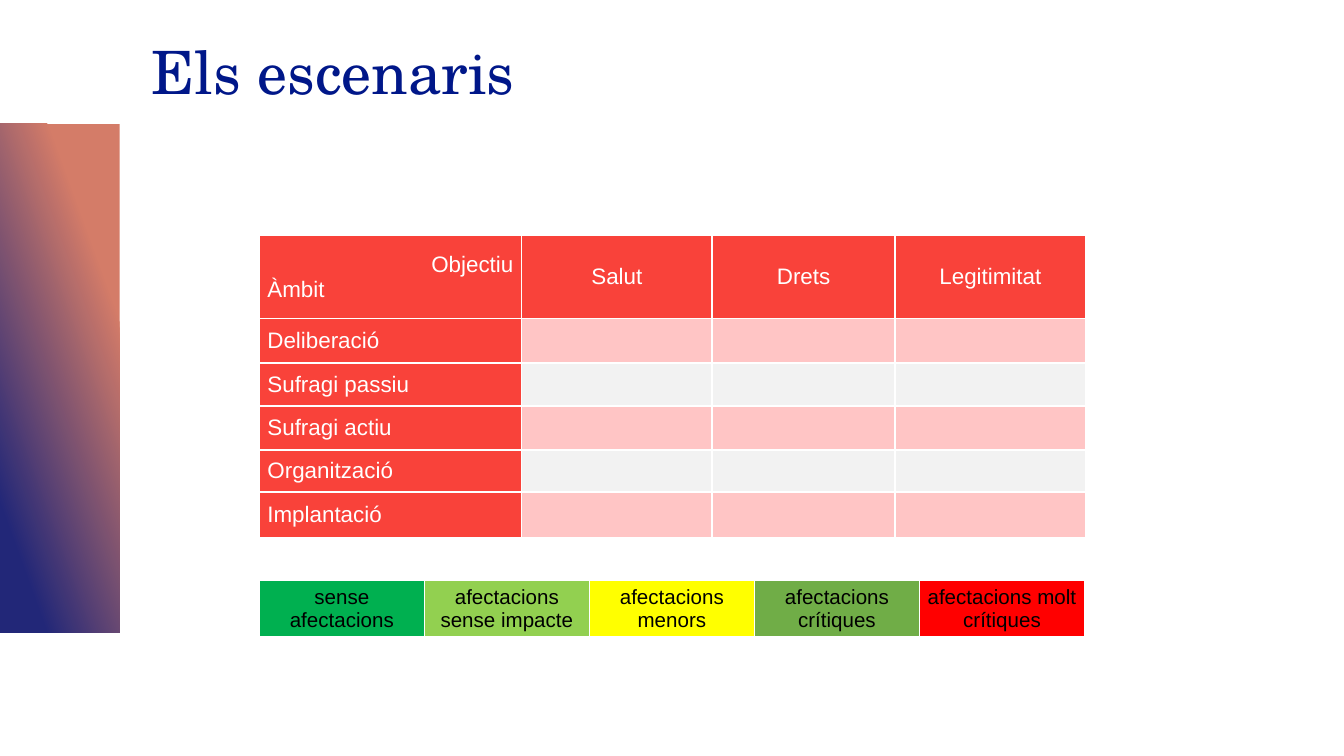
import pptx
import pptx.dml.color
import pptx.enum.shapes
import pptx.enum.text
import pptx.util
from lxml import etree
from pptx.oxml.ns import qn

Inches = pptx.util.Inches
Pt = pptx.util.Pt
ALIGN = pptx.enum.text.PP_ALIGN
ANCHOR = pptx.enum.text.MSO_ANCHOR


def color(hex_value):
    return pptx.dml.color.RGBColor.from_string(hex_value)


def fill_cell(cell, fill, lines=(), size=12, font_color="FFFFFF"):
    """Format a cell; lines holds (text, alignment) pairs."""
    margins = {"margin_left": 0.06, "margin_right": 0.06, "margin_top": 0, "margin_bottom": 0}
    for name, value in margins.items():
        setattr(cell, name, Inches(value))
    cell.vertical_anchor = ANCHOR.MIDDLE
    for index, (text, alignment) in enumerate(lines):
        frame = cell.text_frame
        para = frame.add_paragraph() if index else frame.paragraphs[0]
        para.alignment = alignment
        span = para.add_run()
        span.text = text
        span.font.color.rgb = color(font_color)
        for name, value in {"name": "Arial", "size": Pt(size), "bold": False}.items():
            setattr(span.font, name, value)
    # White borders come before the fill in the cell properties
    properties = cell._tc.get_or_add_tcPr()
    for side in ("lnL", "lnR", "lnT", "lnB"):
        line = etree.SubElement(properties, qn(f"a:{side}"), w=str(Pt(1)))
        solid = etree.SubElement(line, qn("a:solidFill"))
        etree.SubElement(solid, qn("a:srgbClr"), val="FFFFFF")
    cell.fill.solid()
    cell.fill.fore_color.rgb = color(fill)


# Widescreen page, 16:9
deck = pptx.Presentation()
deck.slide_width = Inches(10)
deck.slide_height = Inches(10 * 9 / 16)
page = deck.slides.add_slide(deck.slide_layouts[6])

# Gradient band on the left edge
band = page.shapes.add_shape(
    pptx.enum.shapes.MSO_SHAPE.RECTANGLE, Inches(-1.45), Inches(2.37), Inches(3.79), Inches(0.89)
)
band.rotation = 90
band._element.spPr.find(qn("a:xfrm")).set("flipV", "1")
band.shadow.inherit = False
band.line.fill.background()
band.fill.gradient()
band.fill.gradient_angle = 70
for stop, (position, shade) in zip(band.fill.gradient_stops, [(0.23, "D47C68"), (0.85, "222778")]):
    stop.position = position
    stop.color.rgb = color(shade)

# Title
box = page.shapes.add_textbox(Inches(1.03), Inches(0.26), Inches(8.32), Inches(0.59))
box.text_frame.word_wrap = True
box.text_frame.vertical_anchor = ANCHOR.BOTTOM
para = box.text_frame.paragraphs[0]
para.line_spacing = 0.9
span = para.add_run()
span.text = "Els escenaris"
span.font.name = "TeX Gyre Schola"
span.font.size = Pt(32)
span.font.color.rgb = color("001789")

# Scenario table
goals = ["Salut", "Drets", "Legitimitat"]
areas = ["Deliberació", "Sufragi passiu", "Sufragi actiu", "Organització", "Implantació"]
scenarios = page.shapes.add_table(
    len(areas) + 1, len(goals) + 1, Inches(1.93), Inches(1.75), Inches(6.14), Inches(2.25)
).table
for column, width in zip(scenarios.columns, [1.95, 1.42, 1.36, 1.42]):
    column.width = Inches(width)
for row, height in zip(scenarios.rows, [0.62, 0.33, 0.32, 0.33, 0.31, 0.34]):
    row.height = Inches(height)

corner = [("Objectiu", ALIGN.RIGHT), ("Àmbit", ALIGN.JUSTIFY)]
fill_cell(scenarios.cell(0, 0), "F9423A", corner)
for column, goal in enumerate(goals, 1):
    fill_cell(scenarios.cell(0, column), "F9423A", [(goal, ALIGN.CENTER)])
for row, area in enumerate(areas, 1):
    fill_cell(scenarios.cell(row, 0), "F9423A", [(area, ALIGN.JUSTIFY)])
    for column in range(1, len(goals) + 1):
        fill_cell(scenarios.cell(row, column), "FFC5C5" if row % 2 else "F2F2F2")

# Legend of impact levels
levels = {
    "sense afectacions": "00B050",
    "afectacions sense impacte": "92D050",
    "afectacions menors": "FFFF00",
    "afectacions crítiques": "70AD47",
    "afectacions molt crítiques": "FF0000",
}
legend = page.shapes.add_table(
    1, len(levels), Inches(1.93), Inches(4.32), Inches(6.14), Inches(0.42)
).table
for column, (level, shade) in enumerate(levels.items()):
    fill_cell(legend.cell(0, column), shade, [(level, ALIGN.CENTER)], 11, "000000")

deck.save("out.pptx")
